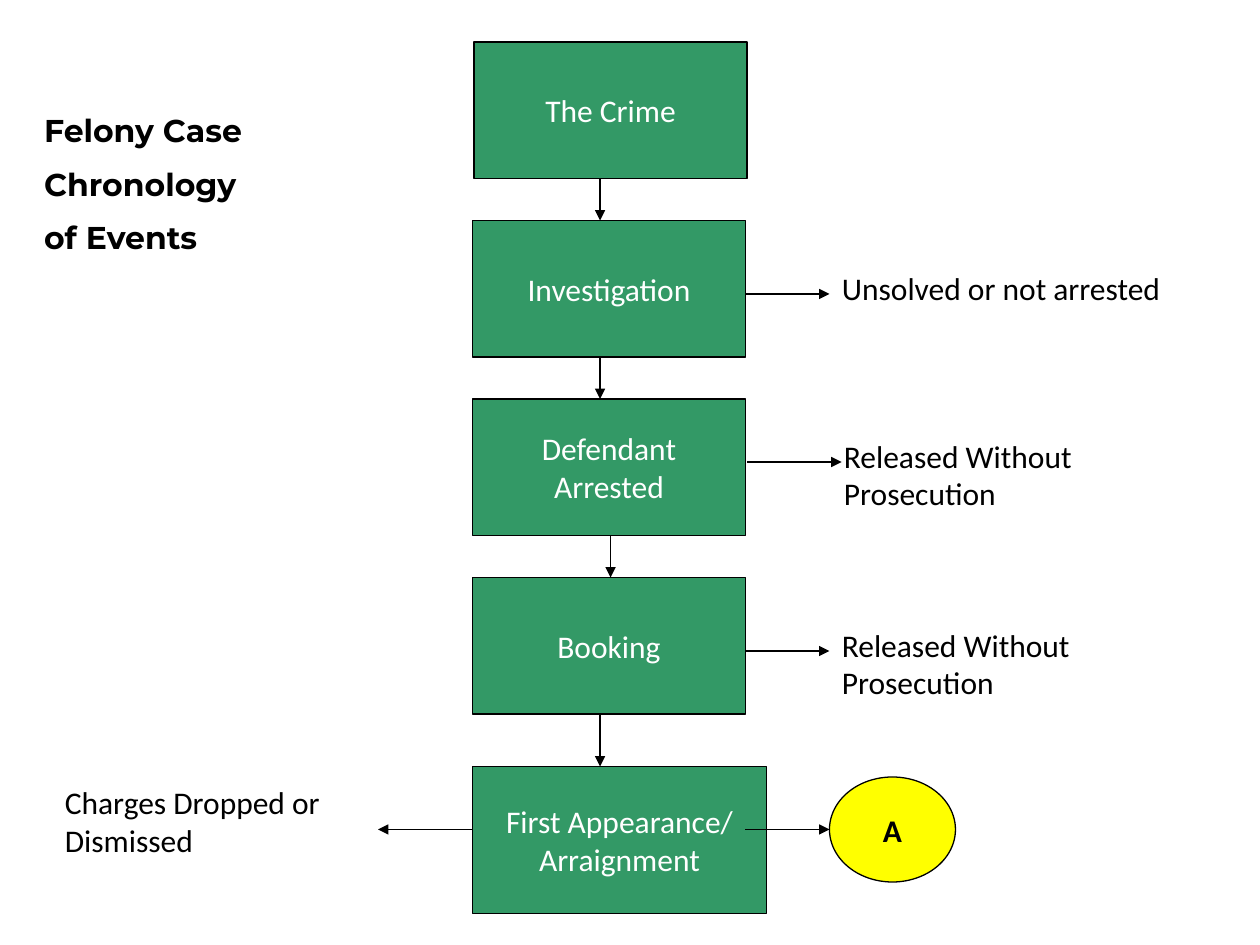
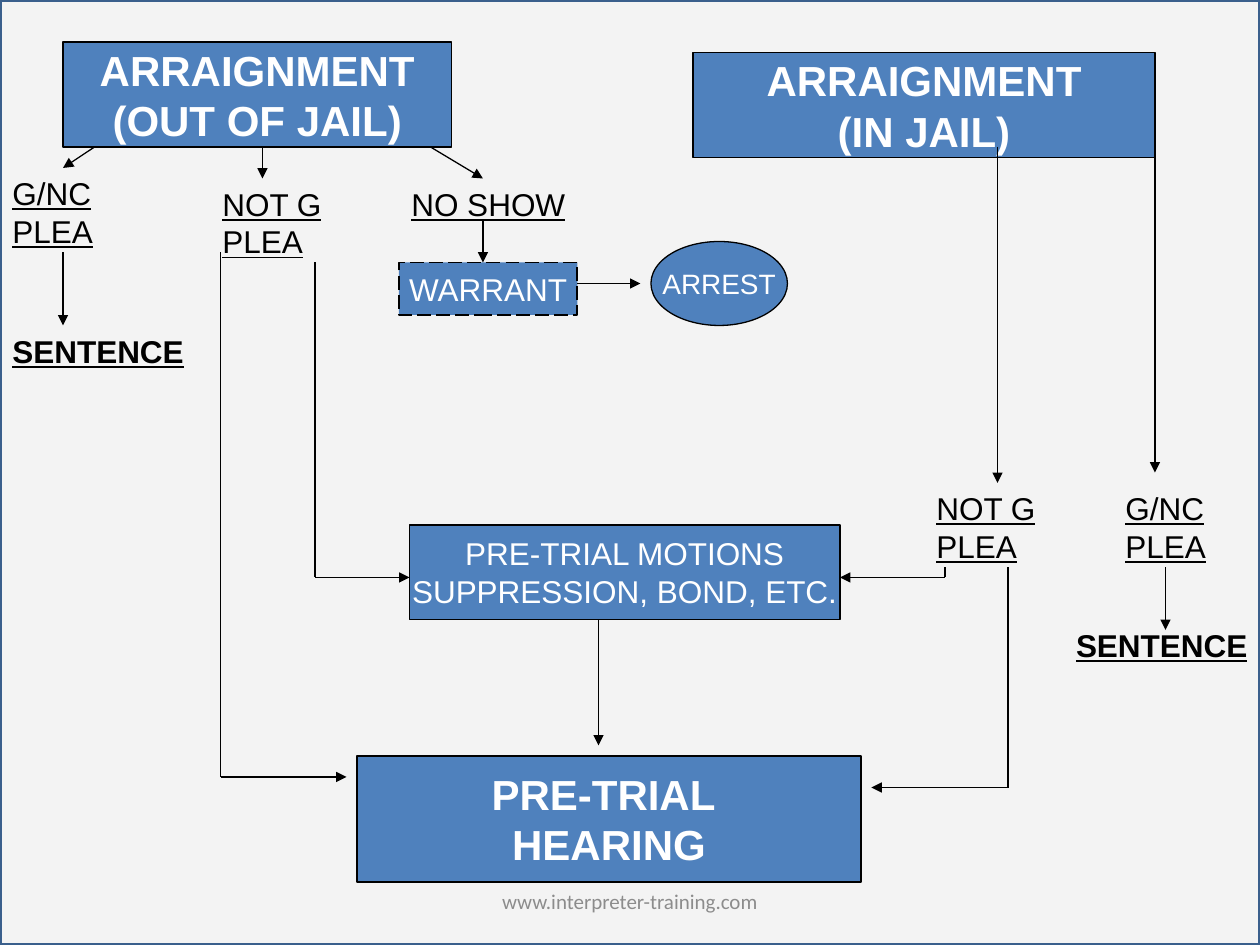
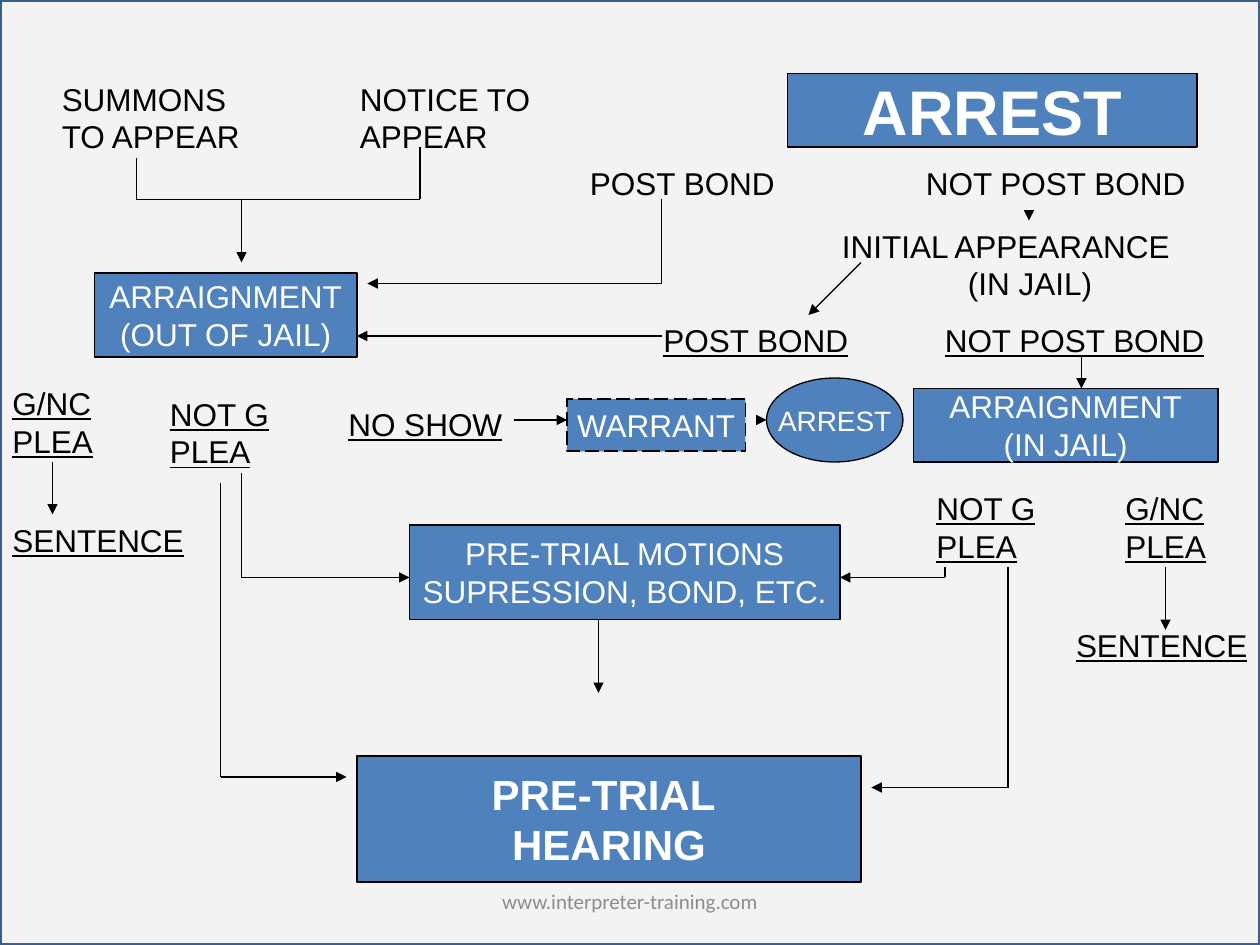
"""Build three flow charts of a felony case."""
from dataclasses import dataclass
from typing import Any

from lxml import etree
from pptx import Presentation
from pptx import util as u
from pptx.dml.color import RGBColor
from pptx.enum import dml, shapes, text
from pptx.oxml.ns import qn

GRID = 2.54 / 12
HUES = {"ink": "000000", "page": "FFFFFF", "panel": "F2F2F2", "edge": "3A5F8C",
        "blue": "4F81BD", "green": "339966", "sun": "FFFF00", "gray": "8C8C8C"}
KIND = shapes.MSO_SHAPE
MID = text.MSO_ANCHOR.MIDDLE
TOP = text.MSO_ANCHOR.TOP
MAIN = {"name": "Arial", "size": u.Pt(18)}
SOFT = {**MAIN, "name": "Calibri"}
HEAD = {**MAIN, "name": "Montserrat", "bold": True}
BIG = {**MAIN, "size": u.Pt(24), "bold": True}
HUGE = {**BIG, "size": u.Pt(36)}
SMALL = {**MAIN, "size": u.Pt(16)}
FOOT = {**SOFT, "size": u.Pt(12)}
LINK = {**MAIN, "underline": True}
MOTION = "PRE-TRIAL MOTIONS"
OUT = "ARRAIGNMENT\n(OUT OF JAIL)"
JAIL = "ARRAIGNMENT\n(IN JAIL)"


def cm(n):
    """Turn grid steps into a length."""
    return u.Cm(n * GRID)


def hue(key):
    """Return the named colour."""
    return RGBColor.from_string(HUES[key])


def ink(line, key="ink", width=0.75, dash=None):
    """Style an outline or a connector line."""
    line.color.rgb = hue(key)
    line.width = u.Pt(width)
    line.dash_style = dash


def say(frame, words, font, key="ink", mid=False, wrap=True, anchor=TOP, gap=0):
    """Write one paragraph per line of words; a leading tab indents it."""
    frame.word_wrap = wrap
    frame.vertical_anchor = anchor
    for i, line in enumerate(words.split("\n")):
        para = frame.add_paragraph() if i else frame.paragraphs[0]
        para.alignment = text.PP_ALIGN.CENTER if mid else text.PP_ALIGN.LEFT
        para.space_before = u.Pt(gap if i else 0)
        if line.startswith("\t"):
            para._p.get_or_add_pPr().set("marL", str(cm(12)))
        run = para.add_run()
        run.text = line.lstrip("\t")
        for name, value in font.items():
            setattr(run.font, name, value)
        run.font.color.rgb = hue(key)


@dataclass
class Pen:
    """Draw on a slide relative to the corner of a region."""
    slide: Any
    x: float = 0
    y: float = 0

    def move(self, x, y):
        """Return a pen for a region inside this one."""
        return Pen(self.slide, self.x + x, self.y + y)

    def area(self, box):
        """Turn a box in grid steps into slide lengths."""
        x, y, w, h = box
        return [cm(n) for n in (self.x + x, self.y + y, w, h)]

    def box(self, box, words="", font=MAIN, fill="blue", key="page",
            kind=KIND.RECTANGLE, **line):
        """Draw a filled shape with centred words."""
        part = self.slide.shapes.add_shape(kind, *self.area(box))
        part.shadow.inherit = False
        part.fill.solid()
        part.fill.fore_color.rgb = hue(fill)
        ink(part.line, **line)
        if words:
            say(part.text_frame, words, font, key, True, False, MID)
        return part

    def note(self, box, words, font=MAIN, **form):
        """Write words without a frame."""
        part = self.slide.shapes.add_textbox(*self.area(box))
        say(part.text_frame, words, font, **form)

    def wire(self, *spots, head=True):
        """Join spots by straight lines, with an arrowhead at the end."""
        ends = [(cm(self.x + x), cm(self.y + y)) for x, y in spots]
        for a, b in zip(ends, ends[1:]):
            part = self.slide.shapes.add_connector(
                shapes.MSO_CONNECTOR.STRAIGHT, *a, *b)
            ink(part.line)
            spec = part._element.spPr
            if head and b is ends[-1]:
                etree.SubElement(spec.find(qn("a:ln")), qn("a:tailEnd"),
                                 type="triangle")
            etree.SubElement(spec, qn("a:effectLst"))


def panel(pen):
    """Draw the pale backdrop and the footer."""
    back = pen.box((0, 0, 120, 90), fill="panel", key="ink")
    ink(back.line, "edge", 2)
    tint = back._element.spPr.find(qn("a:solidFill"))[0]
    etree.SubElement(tint, qn("a:alpha"), val="88000")
    pen.note((41, 83.4, 38, 4.8), "www.interpreter-training.com", FOOT,
             key="gray", mid=True, anchor=MID)


def plea(pen, stem, drop, word, bold):
    """Lead from a guilty plea down to the sentence."""
    pen.note((0, 0, 11.1, 8.4), "G/NC\nPLEA", LINK)
    pen.note((*word, 19, 4.8), "SENTENCE", {**LINK, "bold": bold})
    pen.wire((stem, 8), (stem, drop))


def deny(pen):
    """Write the plea of not guilty."""
    pen.note((0, 0, 13, 8.4), "NOT G\nPLEA", LINK)


def warrant(pen, far, tip):
    """Lead from a warrant to the arrest."""
    pen.box((0, 0, 17, 5), "WARRANT", width=1, dash=dml.MSO_LINE.LONG_DASH)
    pen.box((far, -2, 13, 8), "ARREST", SMALL, kind=KIND.OVAL)
    pen.wire(*tip)


def hearing(pen, topic, left, start, stop, bold):
    """Lead from the pleas through motions to the hearing."""
    pen.box((39, 4, 41, 9), f"{MOTION}\n{topic}, BOND, ETC.")
    pen.box((34, 26, 48, 12), "PRE-TRIAL \nHEARING", BIG)
    deny(pen.move(88, 0))
    plea(pen.move(106, 0), 5, 14, (-4.7, 13), bold)
    pen.wire(left, (left[0], 9), (39, 9))
    pen.wire((21, start), (21, 28), (33, 28))
    pen.wire((90, 8), (90, 9), (80, 9))
    pen.wire((96, 8), (96, 29), (83, 29))
    pen.wire((57, 13), (57, stop))


def title(pen, box, words):
    """Place the slide title."""
    part = pen.slide.shapes.title
    part.left, part.top, part.width, part.height = pen.area(box)
    part.text_frame.auto_size = text.MSO_AUTO_SIZE.NONE
    say(part.text_frame, words, HEAD, gap=9)


def steps(pen):
    """Draw the column of events."""
    names = ["The Crime", "Investigation", "Defendant\nArrested", "Booking"]
    for i, name in enumerate(names):
        pen.box((0 if i else 0.15, 17 * i, 26, 13), name, SOFT, "green")
    pen.box((0, 69, 28, 14), "First Appearance/\nArraignment", SOFT, "green")
    for i, x in enumerate((12.15, 12.15, 13.15, 12.15)):
        pen.wire((x, 17 * i + 13), (x, 69 if i == 3 else 17 * i + 17))


def exits(pen):
    """Draw the ways out of the column."""
    free = "Released Without Prosecution"
    pen.note((34, 21, 41, 10.8), "Unsolved or not arrested", SOFT)
    pen.note((34.2, 37, 36, 10.8), free, SOFT)
    pen.note((34, 55, 31.2, 10.8), free, SOFT)
    pen.note((-40, 70, 31, 10.8), "Charges Dropped or Dismissed", SOFT)
    pen.box((34, 70, 12, 10), "A", {**SOFT, "bold": True}, "sun", "ink",
            KIND.FLOWCHART_CONNECTOR)
    for a, b, y in ((26, 34, 24), (26.15, 35.15, 40), (26, 34, 58),
                    (26, 34, 75), (0, -9, 75)):
        pen.wire((a, y), (b, y))


def release(pen):
    """Draw the arraignment out of jail and its pleas."""
    pen.box((6, 4, 37, 10), OUT, BIG)
    plea(pen.move(0, 16), 6, 15, (0, 15), True)
    deny(pen.move(20, 17))
    pen.note((38, 17, 18, 4.8), "NO SHOW", LINK)
    warrant(pen.move(38, 25), 24, ((17, 2), (23, 2)))
    for a, b in (((9, 14), (6, 16)), ((25, 14), (25, 17)),
                 ((41, 14), (46, 17)), ((46, 21), (46, 25))):
        pen.wire(a, b)


def custody(pen):
    """Draw the arraignment in jail."""
    pen.box((0, 0, 44, 10), JAIL, BIG)
    pen.wire((29, 9), (29, 41))
    pen.wire((44, 9), (44, 40))


def summons(pen):
    """Draw the notices that lead to an arraignment out of jail."""
    pen.note((4.7, 7, 20.3, 8.4), "SUMMONS\nTO APPEAR")
    pen.note((33.1, 7, 20.9, 8.4), "NOTICE TO\nAPPEAR")
    pen.box((9, 26, 25, 8), OUT)
    pen.wire((13, 15), (13, 19), (23, 19), (23, 25))
    pen.wire((40, 14), (40, 19), (23, 19), head=False)


def bond(pen):
    """Draw the arrest and the choices about bond."""
    pen.box((75, 7, 39, 7), "ARREST", HUGE)
    pen.note((55, 15, 20, 4.8), "POST BOND")
    pen.note((87, 15, 28, 4.8), "NOT POST BOND")
    pen.note((79, 21, 38, 8.4), "INITIAL APPEARANCE\n\t(IN JAIL)")
    pen.note((62, 30, 20, 4.8), "POST BOND", LINK)
    pen.note((88.8, 30, 28, 4.8), "NOT POST BOND", LINK)
    pen.box((87, 37, 29, 7), JAIL)
    pen.wire((63, 19), (63, 27), (35, 27))
    for a, b in (((98, 20), (98, 21)), ((82, 25), (77, 30)),
                 ((103, 34), (103, 37)), ((63, 32), (34, 32))):
        pen.wire(a, b)


def pleas(pen):
    """Draw the pleas after an arraignment out of jail."""
    plea(pen, 5, 13, (0, 13), False)
    deny(pen.move(15, 1))
    pen.note((32, 2, 18, 4.8), "NO SHOW", LINK)
    pen.wire((49, 4), (54, 4))
    warrant(pen.move(54, 2), 19, ((18, 2), (19, 2)))


def main():
    """Build and save the slides."""
    deck = Presentation()
    deck.slide_width, deck.slide_height = cm(120), cm(90)
    first, second, third = [Pen(deck.slides.add_slide(deck.slide_layouts[n]))
                            for n in (5, 6, 6)]
    title(first, (3, 10, 30, 17.5), "Felony Case\nChronology\nof Events")
    steps(first.move(45, 4))
    exits(first.move(45, 4))

    panel(second)
    release(second)
    custody(second.move(66, 5))
    hearing(second.move(0, 46), "SUPPRESSION", (30, -21), -22, 25, True)

    panel(third)
    summons(third)
    bond(third)
    pleas(third.move(0, 36))
    hearing(third.move(0, 46), "SUPRESSION", (23, -1), 0, 20, False)
    deck.save("out.pptx")


if __name__ == "__main__":
    main()
